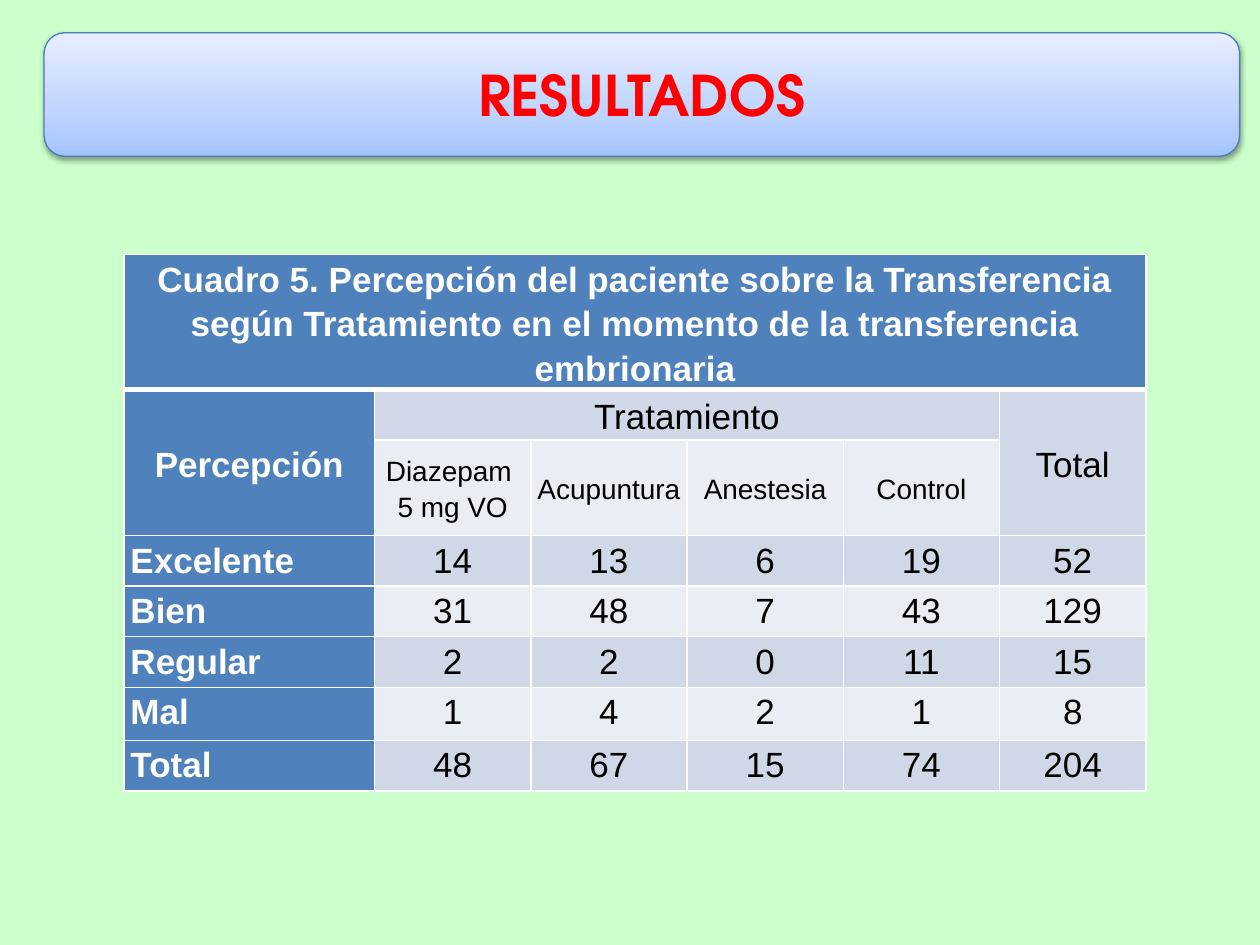
from copy import deepcopy

from lxml import etree
from pptx import Presentation
from pptx.dml.color import RGBColor as RGB
from pptx.enum.shapes import MSO_SHAPE as SHAPE
from pptx.enum.text import MSO_ANCHOR as ANCHOR, PP_ALIGN as ALIGN
from pptx.oxml import parse_xml
from pptx.oxml.ns import nsdecls, qn
from pptx.util import Cm, Pt

COLORS = {
    "page": "CCFFCC", "title": "FF0000", "head": "4F81BD", "dark": "D0D8E8",
    "light": "E9EDF4", "white": "FFFFFF", "black": "000000", "outline": "4B7EBC",
}
GRADIENT = [(0, "A4C4FF"), (0.35, "BFD4FF"), (1, "E6EEFF")]
BANNER = [Cm(v) for v in (0.89, 0.66, 24.1, 2.49)]
COLUMNS = [5.05] + [3.15] * 4 + [2.95]
HEIGHTS = [1.93, 1.02, 1.93, 1.02, 1.02, 1.02, 1.07, 1.02]
MERGES = [(0, 0, 0, 5), (1, 0, 2, 0), (1, 1, 1, 4), (1, 5, 2, 5)]
ROWS = [
    ["Cuadro 5. Percepción del paciente sobre la Transferencia según Tratamiento "
     "en el momento de la transferencia embrionaria", "", "", "", "", ""],
    ["Percepción", "Tratamiento", "", "", "", "Total"],
    ["", "Diazepam \n5 mg VO", "Acupuntura", "Anestesia", "Control", ""],
    ["Excelente", 14, 13, 6, 19, 52],
    ["Bien", 31, 48, 7, 43, 129],
    ["Regular", 2, 2, 0, 11, 15],
    ["Mal", 1, 4, 2, 1, 8],
    ["Total", 48, 67, 15, 74, 204],
]


class Deck:
    """Holds the style and the current slide, and adds each kind of element."""

    def __init__(self):
        self.prs = Presentation()
        self.prs.slide_width, self.prs.slide_height = Cm(25.4), Cm(19.05)
        self.font, self.title_font = "Arial", "TeX Gyre Adventor"
        self.slide = self.prs.slides.add_slide(self.prs.slide_layouts[5])
        self.paint(self.slide.background.fill, "page")

    def paint(self, fill, color):
        fill.solid()
        fill.fore_color.rgb = RGB.from_string(COLORS[color])

    def run(self, p, text, size, color, bold, font):
        r = p.add_run()
        r.text = text
        r.font.size, r.font.bold, r.font.name = Pt(size), bold, font
        r.font.color.rgb = RGB.from_string(COLORS[color])

    def banner(self, box):
        sp = self.slide.shapes.add_shape(SHAPE.FLOWCHART_ALTERNATE_PROCESS, *box)
        sp.line.color.rgb = RGB.from_string(COLORS["outline"])
        sp.line.width = Pt(0.75)
        sp.fill.gradient()
        sp.fill.gradient_angle = 90
        stops = sp._element.spPr.find(qn("a:gradFill")).find(qn("a:gsLst"))
        stops.append(deepcopy(stops[0]))
        for stop, (position, color) in zip(sp.fill.gradient_stops, GRADIENT):
            stop.position = position
            stop.color.rgb = RGB.from_string(color)
        sp._element.spPr.append(parse_xml(
            f'<a:effectLst {nsdecls("a")}><a:outerShdw blurRad="{Pt(3.1)}" '
            f'dist="{Pt(1.6)}" dir="5400000" rotWithShape="0">'
            f'<a:srgbClr val="{COLORS["black"]}"><a:alpha val="38000"/></a:srgbClr>'
            '</a:outerShdw></a:effectLst>'))

    def title(self, text, box):
        sp = self.slide.shapes.title
        sp.left, sp.top, sp.width, sp.height = box
        self.slide.shapes._spTree.append(sp._element)
        tf = sp.text_frame
        tf.vertical_anchor = ANCHOR.MIDDLE
        p = tf.paragraphs[0]
        p.alignment = ALIGN.CENTER
        self.run(p, text, 32, "title", True, self.title_font)

    def borders(self, cell, top, bottom):
        tc_pr = cell._tc.get_or_add_tcPr()
        sides = {"lnL": 1, "lnR": 1, "lnT": top, "lnB": bottom}
        for i, (side, width) in enumerate(sides.items()):
            ln = etree.Element(qn(f"a:{side}"), w=str(Pt(width)))
            fill = etree.SubElement(ln, qn("a:solidFill"))
            etree.SubElement(fill, qn("a:srgbClr"), val=COLORS["white"])
            tc_pr.insert(i, ln)

    def cell(self, cell, row, col, value):
        head = row == 0 or col == 0
        band = "dark" if row % 2 else "light"
        cell.margin_left = cell.margin_right = Cm(0.13)
        cell.margin_top = cell.margin_bottom = 0
        cell.vertical_anchor = ANCHOR.MIDDLE if row < 3 else ANCHOR.TOP
        self.paint(cell.fill, "head" if head else band)
        self.borders(cell, 3 if row == 1 else 1, 3 if row == 0 else 1)
        if value == "":
            return
        tf = cell.text_frame
        for i, text in enumerate(str(value).split("\n")):
            p = tf.add_paragraph() if i else tf.paragraphs[0]
            p.alignment = ALIGN.LEFT if col == 0 and row > 2 else ALIGN.CENTER
            p.line_spacing = 1.15
            self.run(p, text, 16 if row == 2 else 20,
                     "white" if head else "black", head, self.font)

    def table(self, left, top, rows, widths, heights, merges):
        table = self.slide.shapes.add_table(
            len(rows), len(widths), Cm(left), Cm(top),
            Cm(sum(widths)), Cm(sum(heights))).table
        table.first_row = table.horz_banding = False
        for column, width in zip(table.columns, widths):
            column.width = Cm(width)
        for row, height in zip(table.rows, heights):
            row.height = Cm(height)
        for r1, c1, r2, c2 in merges:
            table.cell(r1, c1).merge(table.cell(r2, c2))
        for r, values in enumerate(rows):
            for c, value in enumerate(values):
                self.cell(table.cell(r, c), r, c, value)


def main():
    deck = Deck()
    deck.table(2.5, 5.13, ROWS, COLUMNS, HEIGHTS, MERGES)
    deck.banner(BANNER)
    deck.title("RESULTADOS", BANNER)
    deck.prs.save("out.pptx")


if __name__ == "__main__":
    main()
